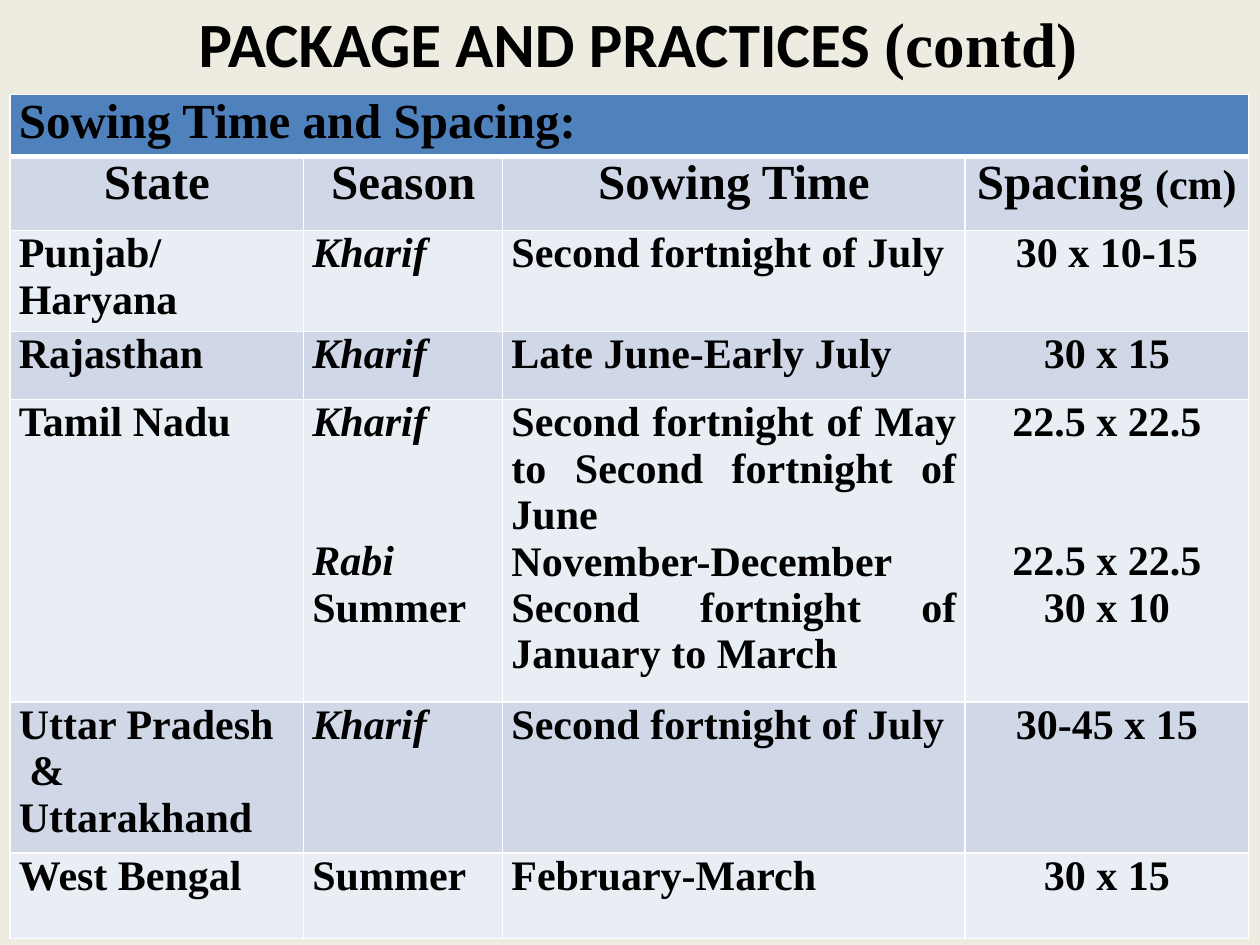
from dataclasses import dataclass

from lxml.etree import SubElement
from pptx import Presentation
from pptx.dml.color import RGBColor
from pptx.enum.text import MSO_ANCHOR, PP_ALIGN as Align
from pptx.oxml.ns import qn
from pptx.util import Inches, Pt


@dataclass(frozen=True)
class Theme:
    background: str = "EEECE1"
    text: str = "000000"
    banner: str = "4F81BD"
    bands: tuple[str, str] = ("D0D8E8", "E9EDF4")
    border: str = "FFFFFF"
    title_font: str = "Calibri"
    body_font: str = "Times New Roman"
    title_size: int = 36
    heading_size: int = 28
    body_size: int = 24


@dataclass(frozen=True)
class Run:
    text: str
    size: int
    italic: bool = False
    font: str = "Times New Roman"


@dataclass(frozen=True)
class Line:
    runs: tuple[Run, ...]
    align: Align = Align.LEFT
    space_before: int = 0


THEME = Theme()


def body(text: str, align: Align = Align.JUSTIFY, gap: int = 0) -> Line:
    """A body line; the names of crop seasons are set in italics."""
    return Line((Run(text, THEME.body_size, text in ("Kharif", "Rabi")),), align, gap)


def heading(text: str, align: Align = Align.CENTER, unit: str = "") -> Line:
    runs = (Run(text, THEME.heading_size),)
    if unit:
        runs += (Run(unit, THEME.body_size),)
    return Line(runs, align)


def record(state: list[str], season: str, sowing: str, spacing: str) -> list[list[Line]]:
    return [[body(name, Align.LEFT) for name in state], [body(season)],
            [body(sowing)], [body(spacing, Align.CENTER)]]


def write(frame, lines: list[Line]) -> None:
    for index, line in enumerate(lines):
        paragraph = frame.add_paragraph() if index else frame.paragraphs[0]
        paragraph.alignment = line.align
        if line.space_before:
            paragraph.space_before = Pt(line.space_before)
        for part in line.runs:
            run = paragraph.add_run()
            run.text = part.text
            run.font.name = part.font
            run.font.size = Pt(part.size)
            run.font.bold = True
            run.font.italic = part.italic
            run.font.color.rgb = RGBColor.from_string(THEME.text)


def set_borders(cell, top: int, bottom: int) -> None:
    properties = cell._tc.get_or_add_tcPr()
    widths = {"a:lnL": 1, "a:lnR": 1, "a:lnT": top, "a:lnB": bottom}
    for position, (tag, width) in enumerate(widths.items()):
        edge = SubElement(properties, qn(tag), w=str(Pt(width)))
        fill = SubElement(edge, qn("a:solidFill"))
        SubElement(fill, qn("a:srgbClr"), val=THEME.border)
        properties.insert(position, edge)  # edges come before the cell fill


def style_cell(cell, fill: str, top: int = 1, bottom: int = 1) -> None:
    cell.margin_left = cell.margin_right = Inches(0.07)
    cell.margin_top = cell.margin_bottom = 0
    cell.vertical_anchor = MSO_ANCHOR.TOP
    cell.fill.solid()
    cell.fill.fore_color.rgb = RGBColor.from_string(fill)
    set_borders(cell, top, bottom)


# Table content
SEASON_GAP = 53  # two body lines, so that Rabi stands beside its sowing time
BANNER = heading("Sowing Time and Spacing:", Align.LEFT)
ROWS = [
    [[heading("State")], [heading("Season")], [heading("Sowing Time")],
     [heading("Spacing ", unit="(cm)")]],
    record(["Punjab/ Haryana"], "Kharif", "Second fortnight of July", "30 x 10-15"),
    record(["Rajasthan"], "Kharif", "Late June-Early July", "30 x 15"),
    [[body("Tamil Nadu")],
     [body("Kharif"), body("Rabi", gap=SEASON_GAP), body("Summer")],
     [body("Second fortnight of May "), body("to Second fortnight of June"),
      body("November-December"), body("Second fortnight of January to March")],
     [body("22.5 x 22.5", Align.CENTER),
      body("22.5 x 22.5", Align.CENTER, SEASON_GAP),
      body("30 x 10", Align.CENTER)]],
    record(["Uttar Pradesh", " & Uttarakhand"], "Kharif",
           "Second fortnight of July", "30-45 x 15"),
    record(["West Bengal"], "Summer", "February-March", "30 x 15"),
]
COLUMN_WIDTHS = [2.33, 1.58, 3.67, 2.25]
ROW_HEIGHTS = [0.49, 0.59, 0.76, 0.54, 2.27, 1.09, 0.68]


def add_title(slide) -> None:
    title = slide.shapes.add_textbox(Inches(0.5), 0, Inches(9.25), Inches(0.67))
    title.text_frame.word_wrap = True
    title.text_frame.vertical_anchor = MSO_ANCHOR.MIDDLE
    write(title.text_frame, [Line((
        Run("PACKAGE AND PRACTICES ", THEME.title_size, font=THEME.title_font),
        Run("(contd) ", THEME.title_size, font=THEME.body_font),
    ), Align.CENTER)])


def add_sowing_table(slide) -> None:
    table = slide.shapes.add_table(
        len(ROW_HEIGHTS), len(COLUMN_WIDTHS), Inches(0.08), Inches(0.75),
        Inches(sum(COLUMN_WIDTHS)), Inches(sum(ROW_HEIGHTS))).table
    for column, width in zip(table.columns, COLUMN_WIDTHS):
        column.width = Inches(width)
    for row, height in zip(table.rows, ROW_HEIGHTS):
        row.height = Inches(height)

    # Banner across all columns
    for cell in table.rows[0].cells:
        style_cell(cell, THEME.banner, bottom=3)
    table.cell(0, 0).merge(table.cell(0, len(COLUMN_WIDTHS) - 1))
    write(table.cell(0, 0).text_frame, [BANNER])

    # Headings and states in alternating bands
    for index, row in enumerate(ROWS):
        for column, lines in enumerate(row):
            cell = table.cell(index + 1, column)
            style_cell(cell, THEME.bands[index % 2], top=1 if index else 3)
            write(cell.text_frame, lines)


def main() -> None:
    deck = Presentation()
    deck.slide_width, deck.slide_height = Inches(10), Inches(7.5)
    slide = deck.slides.add_slide(deck.slide_layouts[6])
    slide.background.fill.solid()
    slide.background.fill.fore_color.rgb = RGBColor.from_string(THEME.background)
    add_title(slide)
    add_sowing_table(slide)
    deck.save("out.pptx")


if __name__ == "__main__":
    main()
